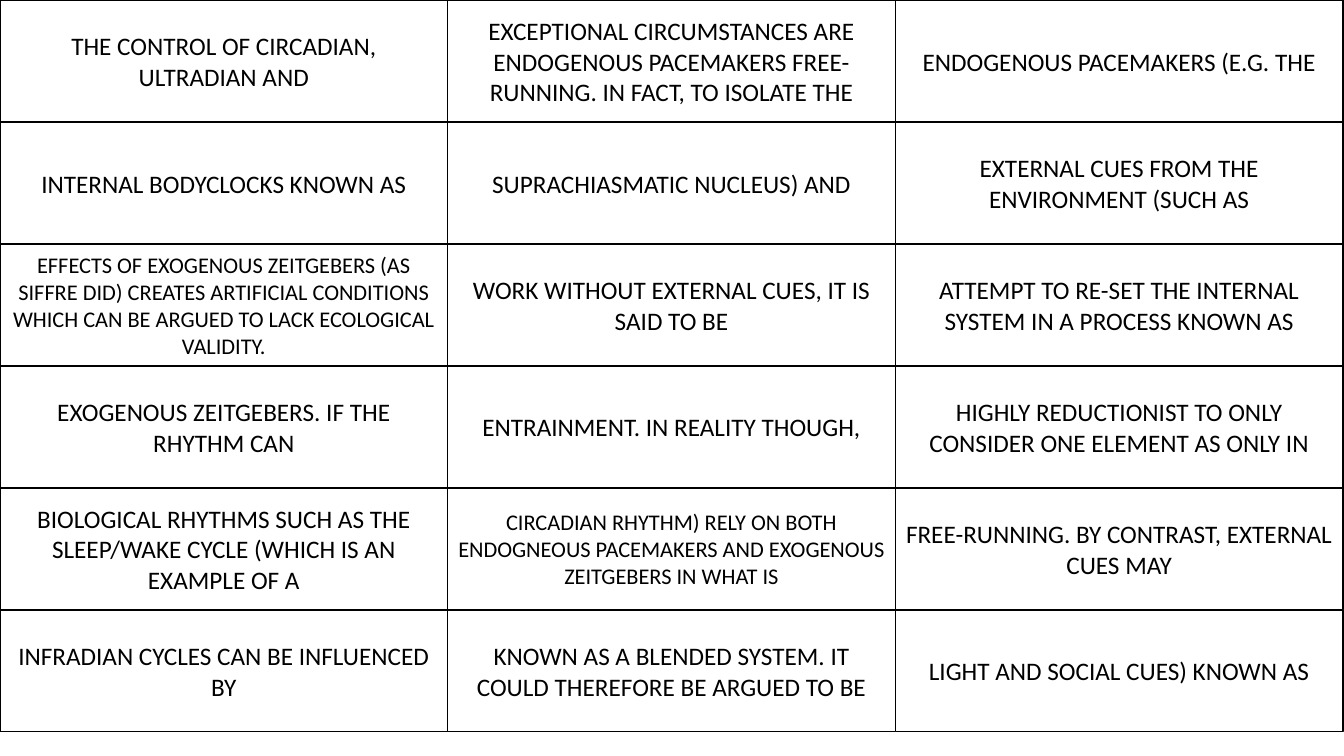
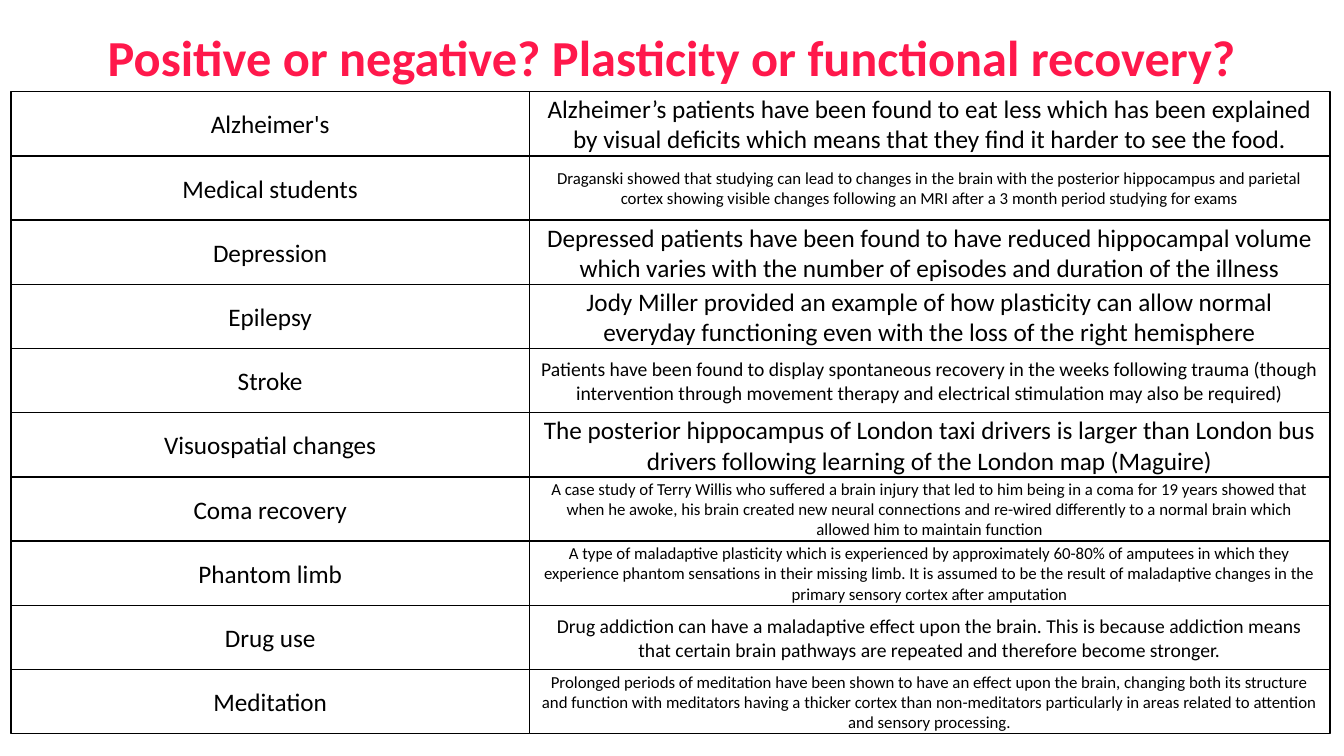
"""Build two card-sort slides: biological rhythms and plasticity."""
from pptx import Presentation
from pptx.dml.color import RGBColor
from pptx.enum.shapes import MSO_SHAPE
from pptx.enum.text import MSO_ANCHOR, MSO_AUTO_SIZE, PP_ALIGN
from pptx.util import Inches, Pt

RECT = MSO_SHAPE.RECTANGLE
CENTER = PP_ALIGN.CENTER
MIDDLE, TOP = MSO_ANCHOR.MIDDLE, MSO_ANCHOR.TOP
FIXED = MSO_AUTO_SIZE.NONE
TITLE_ONLY, BLANK = 5, 6

COLORS = {"paper": "FFFFFF", "ink": "000000", "title": "FF184B"}
FONTS = {
    "card": {"name": "Calibri", "size": Pt(18), "bold": False},
    "title": {"name": "Calibri", "size": Pt(36), "bold": True},
}
FRAMES = {
    "card": {"word_wrap": True, "vertical_anchor": MIDDLE},
    "title": {"word_wrap": True, "vertical_anchor": TOP, "auto_size": FIXED},
}

RHYTHMS = [
    [("THE CONTROL OF CIRCADIAN, ULTRADIAN AND", 18),
     ("EXCEPTIONAL CIRCUMSTANCES ARE ENDOGENOUS PACEMAKERS FREE-RUNNING. "
      "IN FACT, TO ISOLATE THE", 18),
     ("ENDOGENOUS PACEMAKERS (E.G. THE", 18)],
    [("INTERNAL BODYCLOCKS KNOWN AS", 18),
     ("SUPRACHIASMATIC NUCLEUS) AND", 18),
     ("EXTERNAL CUES FROM THE ENVIRONMENT (SUCH AS", 18)],
    [("EFFECTS OF EXOGENOUS ZEITGEBERS (AS SIFFRE DID) CREATES ARTIFICIAL "
      "CONDITIONS WHICH CAN BE ARGUED TO LACK ECOLOGICAL VALIDITY.", 16),
     ("WORK WITHOUT EXTERNAL CUES, IT IS SAID TO BE", 18),
     ("ATTEMPT TO RE-SET THE INTERNAL SYSTEM IN A PROCESS KNOWN AS", 18)],
    [("EXOGENOUS ZEITGEBERS. IF THE RHYTHM CAN", 18),
     ("ENTRAINMENT. IN REALITY THOUGH,", 18),
     ("HIGHLY REDUCTIONIST TO ONLY CONSIDER ONE ELEMENT AS ONLY IN", 18)],
    [("BIOLOGICAL RHYTHMS SUCH AS THE SLEEP/WAKE CYCLE (WHICH IS AN EXAMPLE "
      "OF A", 18),
     ("CIRCADIAN RHYTHM) RELY ON BOTH ENDOGNEOUS PACEMAKERS AND EXOGENOUS "
      "ZEITGEBERS IN WHAT IS", 16),
     ("FREE-RUNNING. BY CONTRAST, EXTERNAL CUES MAY", 18)],
    [("INFRADIAN CYCLES CAN BE INFLUENCED BY", 18),
     ("KNOWN AS A BLENDED SYSTEM. IT COULD THEREFORE BE ARGUED TO BE", 18),
     ("LIGHT AND SOCIAL CUES) KNOWN AS", 18)],
]

HEADING = "Positive or negative? Plasticity or functional recovery?"
STUDIES = [
    ("Alzheimer's", 18,
     "Alzheimer’s patients have been found to eat less which has been "
     "explained by visual deficits which means that they find it harder to "
     "see the food."),
    ("Medical students", 12,
     "Draganski showed that studying can lead to changes in the brain with "
     "the posterior hippocampus and parietal cortex showing visible changes "
     "following an MRI after a 3 month period studying for exams"),
    ("Depression", 18,
     "Depressed patients have been found to have reduced hippocampal volume "
     "which varies with the number of episodes and duration of the illness"),
    ("Epilepsy", 18,
     "Jody Miller provided an example of how plasticity can allow normal "
     "everyday functioning even with the loss of the right hemisphere"),
    ("Stroke", 14,
     "Patients have been found to display spontaneous recovery in the weeks "
     "following trauma (though intervention through movement therapy and "
     "electrical stimulation may also be required)"),
    ("Visuospatial changes", 18,
     "The posterior hippocampus of London taxi drivers is larger than London "
     "bus drivers following learning of the London map (Maguire)"),
    ("Coma recovery", 12,
     "A case study of Terry Willis who suffered a brain injury that led to "
     "him being in a coma for 19 years showed that when he awoke, his brain "
     "created new neural connections and re-wired differently to a normal "
     "brain which allowed him to maintain function"),
    ("Phantom limb", 12,
     "A type of maladaptive plasticity which is experienced by approximately "
     "60-80% of amputees in which they experience phantom sensations in "
     "their missing limb. It is assumed to be the result of maladaptive "
     "changes in the primary sensory cortex after amputation"),
    ("Drug use", 14,
     "Drug addiction can have a maladaptive effect upon the brain. This is "
     "because addiction means that certain brain pathways are repeated and "
     "therefore become stronger."),
    ("Meditation", 12,
     "Prolonged periods of meditation have been shown to have an effect upon "
     "the brain, changing both its structure and function with meditators "
     "having a thicker cortex than non-meditators particularly in areas "
     "related to attention and sensory processing."),
]


def tint(name):
    return RGBColor.from_string(COLORS[name])


def apply(target, values):
    for key, value in values.items():
        setattr(target, key, value)


def write(shape, text, style, color, **extra):
    frame = shape.text_frame
    frame.text = text
    apply(frame, FRAMES[style])
    para = frame.paragraphs[0]
    para.alignment = CENTER
    font = para.runs[0].font
    apply(font, {**FONTS[style], **extra})
    font.color.rgb = tint(color)


def add_card(slide, box, text, size):
    card = slide.shapes.add_shape(RECT, *map(Inches, box))
    card.shadow.inherit = False
    card.fill.solid()
    card.fill.fore_color.rgb = tint("paper")
    card.line.color.rgb = tint("ink")
    card.line.width = Pt(1)
    write(card, text, "card", "ink", size=Pt(size))


def add_grid(slide, rows, left, top, widths, height):
    for row, cells in enumerate(rows):
        for col, (text, size) in enumerate(cells):
            x = left + sum(widths[:col])
            box = (x, top + row * height, widths[col], height)
            add_card(slide, box, text, size)


def add_title(slide, text):
    title = slide.shapes.title
    box = {"left": 0, "top": 0.21, "width": 13.33, "height": 0.71}
    apply(title, {key: Inches(value) for key, value in box.items()})
    write(title, text, "title", "title")


def main():
    deck = Presentation()
    apply(deck, {"slide_width": Inches(13.33), "slide_height": Inches(7.5)})

    slide = deck.slides.add_slide(deck.slide_layouts[BLANK])
    add_grid(slide, RHYTHMS, 0, 0, [4.44] * 3, 1.21)

    slide = deck.slides.add_slide(deck.slide_layouts[TITLE_ONLY])
    add_title(slide, HEADING)
    rows = [[(topic, 18), (text, size)] for topic, size, text in STUDIES]
    top, bottom = 0.91, 7.28
    add_grid(slide, rows, 0.11, top, [5.14, 7.94], (bottom - top) / len(rows))

    deck.save("out.pptx")


if __name__ == "__main__":
    main()
